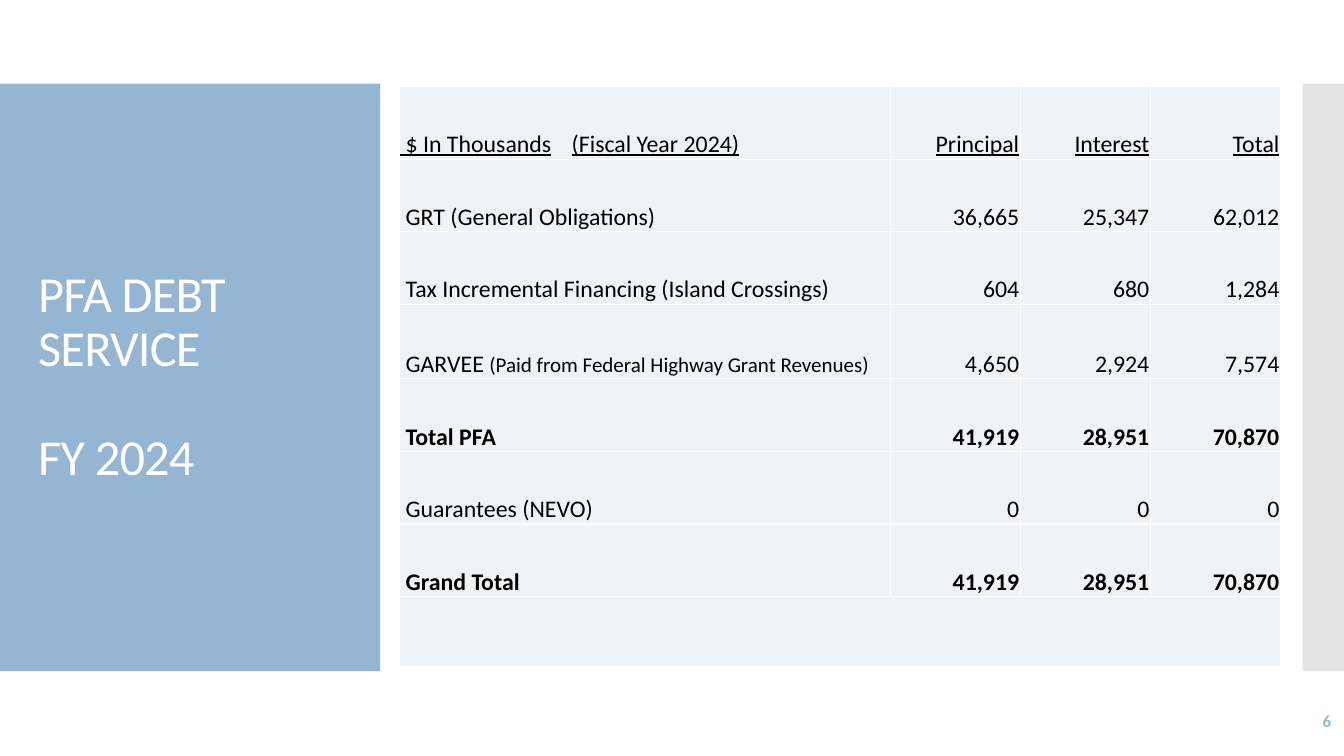
from dataclasses import dataclass
from typing import Optional

from lxml.etree import SubElement
from pptx import Presentation
from pptx.dml.color import RGBColor as RGB
from pptx.enum.shapes import MSO_SHAPE as Shape
from pptx.enum.text import MSO_ANCHOR as Anchor, PP_ALIGN as Align
from pptx.oxml.ns import qn
from pptx.util import Inches, Pt

COLORS = {
    "blue": "94B6D2",
    "grey": "C8C8C8",
    "cell": "EEF3F7",
    "white": "FFFFFF",
    "black": "000000",
}
FONT = "Calibri"
COL_WIDTHS = (4.87, 1.29, 1.29, 1.29)
ROW_HEIGHTS = (0.72, 0.72, 0.72, 0.74, 0.72, 0.72, 0.72, 0.7)
TAB_STOP = 1.7


@dataclass
class Panel:
    left: float
    width: float
    color: str
    alpha: Optional[int] = None


@dataclass
class DebtRow:
    label: str
    amounts: tuple[str, str, str]
    note: str = ""
    bold: bool = False
    underline: bool = False


PANELS = [
    Panel(0, 3.77, "blue"),
    Panel(12.92, 0.41, "grey", 50),
]
ROWS = [
    DebtRow(" $ In Thousands\t(Fiscal Year 2024)",
            ("Principal", "Interest", "Total"), underline=True),
    DebtRow(" GRT (General Obligations)", ("36,665", "25,347", "62,012")),
    DebtRow(" Tax Incremental Financing (Island Crossings)",
            ("604", "680", "1,284")),
    DebtRow(" GARVEE ", ("4,650", "2,924", "7,574"),
            note="(Paid from Federal Highway Grant Revenues)"),
    DebtRow(" Total PFA", ("41,919", "28,951", "70,870"), bold=True),
    DebtRow(" Guarantees (NEVO)", ("0", "0", "0")),
    DebtRow(" Grand Total", ("41,919", "28,951", "70,870"), bold=True),
]


def write(p, text: str, *, size: float = 17, color: str = "black",
          bold: bool = False, underline: bool = False,
          align=Align.LEFT, spacing: Optional[int] = None) -> None:
    p.alignment = align
    r = p.add_run()
    r.text = text
    r.font.name = FONT
    r.font.size = Pt(size)
    r.font.bold = bold
    r.font.underline = underline
    r.font.color.rgb = RGB.from_string(COLORS[color])
    if spacing is not None:
        r.font._element.set("spc", str(spacing))


def add_panel(slide, panel: Panel) -> None:
    sp = slide.shapes.add_shape(Shape.RECTANGLE, Inches(panel.left), Inches(0.83),
                                Inches(panel.width), Inches(5.83))
    sp.shadow.inherit = False
    sp.line.fill.background()
    sp.fill.solid()
    sp.fill.fore_color.rgb = RGB.from_string(COLORS[panel.color])
    if panel.alpha is not None:
        clr = sp._element.spPr.find(qn("a:solidFill"))[0]
        SubElement(clr, qn("a:alpha"), val=str(panel.alpha * 1000))


def add_textbox(slide, left: float, top: float, width: float, height: float):
    sp = slide.shapes.add_textbox(Inches(left), Inches(top),
                                  Inches(width), Inches(height))
    tf = sp.text_frame
    tf.word_wrap = True
    tf.vertical_anchor = Anchor.MIDDLE
    return tf


def add_title(slide) -> None:
    tf = add_textbox(slide, 0.28, 1.23, 3.22, 5.03)
    heading, year = tf.paragraphs[0], tf.add_paragraph()
    for p, text in ((heading, "PFA DEBT SERVICE"), (year, "FY 2024")):
        p.line_spacing = 0.9
        write(p, text, size=36, color="white", spacing=-60)
    year.space_before = Pt(39)


def style_cell(cell) -> None:
    cell.margin_left = cell.margin_right = cell.margin_top = Inches(0.01)
    cell.margin_bottom = 0
    cell.vertical_anchor = Anchor.BOTTOM
    cell.fill.solid()
    cell.fill.fore_color.rgb = RGB.from_string(COLORS["cell"])
    tcPr = cell._tc.get_or_add_tcPr()
    for i, side in enumerate(("lnL", "lnR", "lnT", "lnB")):
        ln = SubElement(tcPr, qn(f"a:{side}"), w=str(Pt(1)))
        fill = SubElement(ln, qn("a:solidFill"))
        SubElement(fill, qn("a:srgbClr"), val=COLORS["white"])
        tcPr.insert(i, ln)


def add_tab_stop(p, position: float) -> None:
    tabs = SubElement(p._p.get_or_add_pPr(), qn("a:tabLst"))
    SubElement(tabs, qn("a:tab"), pos=str(Inches(position)), algn="l")


def add_debt_table(slide) -> None:
    frame = slide.shapes.add_table(
        len(ROW_HEIGHTS), len(COL_WIDTHS), Inches(3.96), Inches(0.86),
        Inches(sum(COL_WIDTHS)), Inches(sum(ROW_HEIGHTS)))
    table = frame.table
    table.first_row = table.horz_banding = False
    for col, width in zip(table.columns, COL_WIDTHS):
        col.width = Inches(width)
    for row, height in zip(table.rows, ROW_HEIGHTS):
        row.height = Inches(height)
    for cell in table.iter_cells():
        style_cell(cell)

    for row, debt in zip(table.rows, ROWS):
        label, *amounts = (cell.text_frame.paragraphs[0] for cell in row.cells)
        look = {"bold": debt.bold, "underline": debt.underline}
        write(label, debt.label, **look)
        if "\t" in debt.label:
            add_tab_stop(label, TAB_STOP)
        if debt.note:
            write(label, debt.note, size=15)
        for p, amount in zip(amounts, debt.amounts):
            write(p, amount, align=Align.RIGHT, **look)

    last = len(ROW_HEIGHTS) - 1
    table.cell(last, 0).merge(table.cell(last, len(COL_WIDTHS) - 1))


def main() -> None:
    prs = Presentation()
    prs.slide_width, prs.slide_height = Inches(13.33), Inches(7.5)
    slide = prs.slides.add_slide(prs.slide_layouts[6])
    for panel in PANELS:
        add_panel(slide, panel)
    add_title(slide)
    number = add_textbox(slide, 11.63, 6.95, 1.67, 0.4)
    write(number.paragraphs[0], "6", size=12, color="blue", bold=True,
          align=Align.RIGHT)
    add_debt_table(slide)
    prs.save("out.pptx")


if __name__ == "__main__":
    main()
